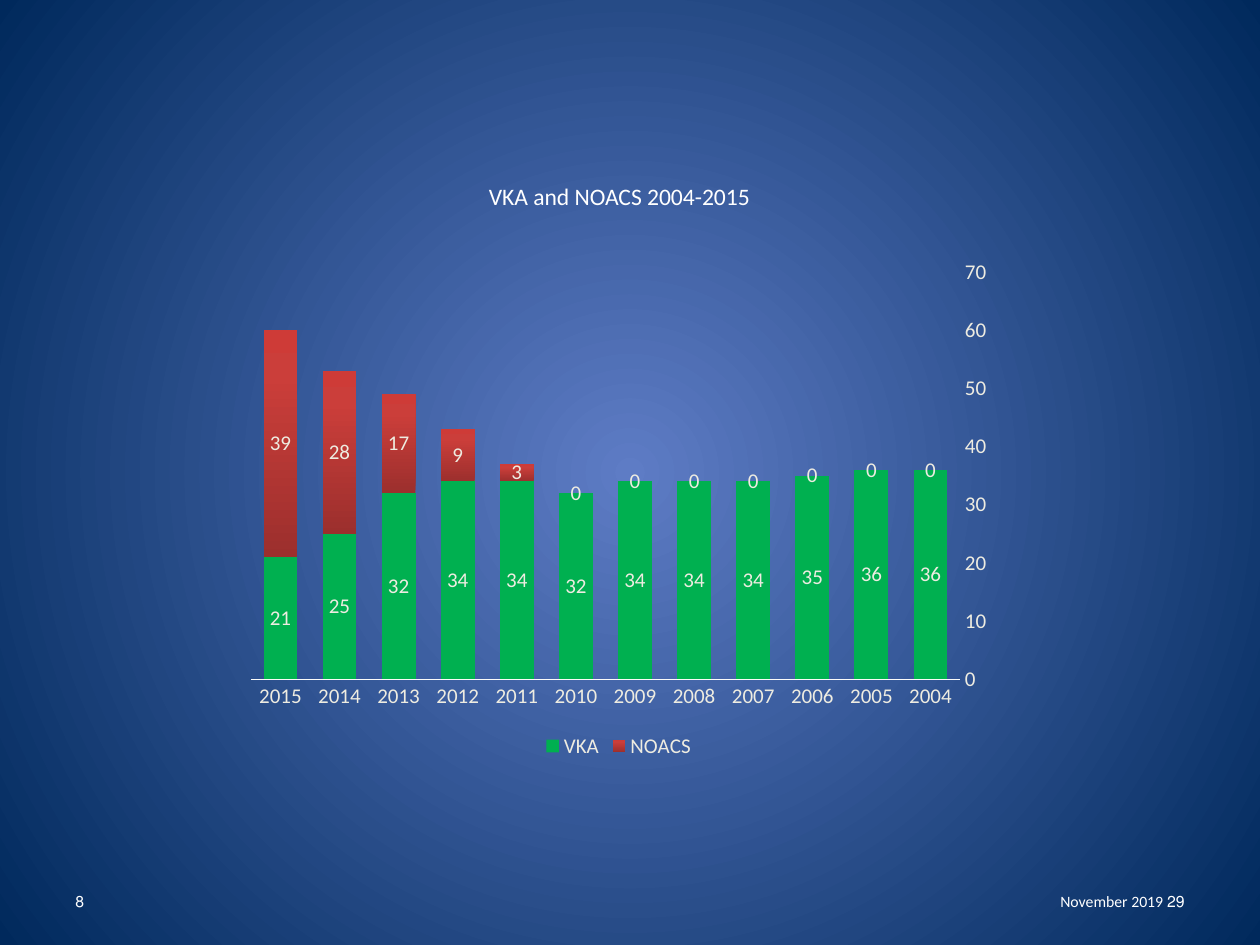
from copy import deepcopy

from pptx import Presentation
from pptx.chart.data import CategoryChartData
from pptx.dml.color import RGBColor
from pptx.enum.chart import (XL_CHART_TYPE as ChartType, XL_LABEL_POSITION as LabelPosition,
                             XL_LEGEND_POSITION as LegendPosition, XL_TICK_MARK as TickMark)
from pptx.enum.text import MSO_ANCHOR as Anchor, PP_ALIGN as Align
from pptx.oxml import parse_xml
from pptx.oxml.ns import nsdecls
from pptx.util import Inches, Pt

WIDTH, HEIGHT = 10, 7.5
FONT = "Calibri"
COLORS = {
    "white": "FFFFFF", "cream": "EEECE1", "axis": "FCFCFA", "green": "00B050",
    "glow": "5E7CC5", "navy": "00295C",
    "red_dark": "9C2F2D", "red": "CB3E3A", "red_light": "CE3B37",
}
YEARS = range(2004, 2016)
VKA = (36, 36, 35, 34, 34, 34, 32, 34, 34, 32, 25, 21)
NOACS = (0, 0, 0, 0, 0, 0, 0, 3, 9, 17, 28, 39)


def color(name):
    return RGBColor.from_string(COLORS[name])


def style_font(font, size, name="cream"):
    font.name, font.size = FONT, Pt(size)
    font.color.rgb = color(name)


def fill_gradient(fill, element, stops):
    """Set the fill of the element to a gradient of (share, colour name) stops."""
    fill.gradient()
    stop_list = element.xpath(".//a:gradFill/a:gsLst")[0]
    while len(stop_list) < len(stops):
        stop_list.append(deepcopy(stop_list[-1]))
    for stop, (position, name) in zip(fill.gradient_stops, stops):
        stop.position = position
        stop.color.rgb = color(name)


def paint_background(slide):
    fill_gradient(slide.background.fill, slide.element, [(0, "glow"), (1, "navy")])
    linear = slide.element.xpath(".//p:bg//a:lin")[0]
    linear.getparent().replace(linear, parse_xml(
        f'<a:path {nsdecls("a")} path="circle">'
        '<a:fillToRect l="50000" t="50000" r="50000" b="50000"/></a:path>'))


def add_text(slide, box, text, size=9, align=Align.LEFT):
    """Add a right-to-left line of text, centred vertically in the box."""
    frame = slide.shapes.add_textbox(*map(Inches, box)).text_frame
    frame.word_wrap = True
    frame.vertical_anchor = Anchor.MIDDLE
    paragraph = frame.paragraphs[0]
    paragraph.alignment = align
    paragraph._p.get_or_add_pPr().set("rtl", "1")
    run = paragraph.add_run()
    run.text = text
    style_font(run.font, size, "white")


def add_footer(slide, box):
    left, top, width, height = box
    part = width * 0.26
    add_text(slide, (left + width - part, top, part, height), "29 November 2019",
             align=Align.RIGHT)
    add_text(slide, (left, top, part, height), "8")


def style_axes(chart):
    years, counts = chart.category_axis, chart.value_axis
    for axis in (years, counts):
        axis.major_tick_mark = axis.minor_tick_mark = TickMark.NONE
        axis.has_major_gridlines = False
        style_font(axis.tick_labels.font, 12)
    years.reverse_order = True
    years.format.line.color.rgb = color("axis")
    years.format.line.width = Pt(0.75)
    counts.format.line.fill.background()
    counts.minimum_scale, counts.maximum_scale, counts.major_unit = 0, 70, 10


def add_stacked_chart(slide, box):
    data = CategoryChartData()
    data.categories = [str(year) for year in YEARS]
    data.add_series("VKA", VKA)
    data.add_series("NOACS", NOACS)
    chart = slide.shapes.add_chart(ChartType.COLUMN_STACKED, *map(Inches, box), data).chart
    style_font(chart.font, 10, "white")
    chart.has_title = False
    chart.has_legend = True
    chart.legend.position = LegendPosition.BOTTOM
    chart.legend.include_in_layout = False
    style_font(chart.legend.font, 12)
    style_axes(chart)

    plot = chart.plots[0]
    plot.gap_width, plot.overlap, plot.vary_by_categories = 75, 100, False
    for series in plot.series:
        series.invert_if_negative = False
        labels = series.data_labels
        labels.show_value = True
        labels.position = LabelPosition.CENTER
        style_font(labels.font, 12)
    vka, noacs = plot.series
    vka.format.fill.solid()
    vka.format.fill.fore_color.rgb = color("green")
    fill_gradient(noacs.format.fill, noacs._element,
                  [(0, "red_dark"), (0.8, "red"), (1, "red_light")])
    noacs.format.fill.gradient_angle = 90


def main():
    presentation = Presentation()
    presentation.slide_width, presentation.slide_height = Inches(WIDTH), Inches(HEIGHT)
    slide = presentation.slides.add_slide(presentation.slide_layouts[6])
    paint_background(slide)
    add_text(slide, (3.76, 1.33, 2.31, 0.45), "VKA and NOACS 2004-2015",
             size=13.5, align=Align.CENTER)
    add_stacked_chart(slide, (1.87, 1.98, 6.08, 4.08))
    margin = WIDTH * 0.05
    add_footer(slide, (margin, 6.95, WIDTH - 2 * margin, 0.4))
    presentation.save("out.pptx")


if __name__ == "__main__":
    main()
